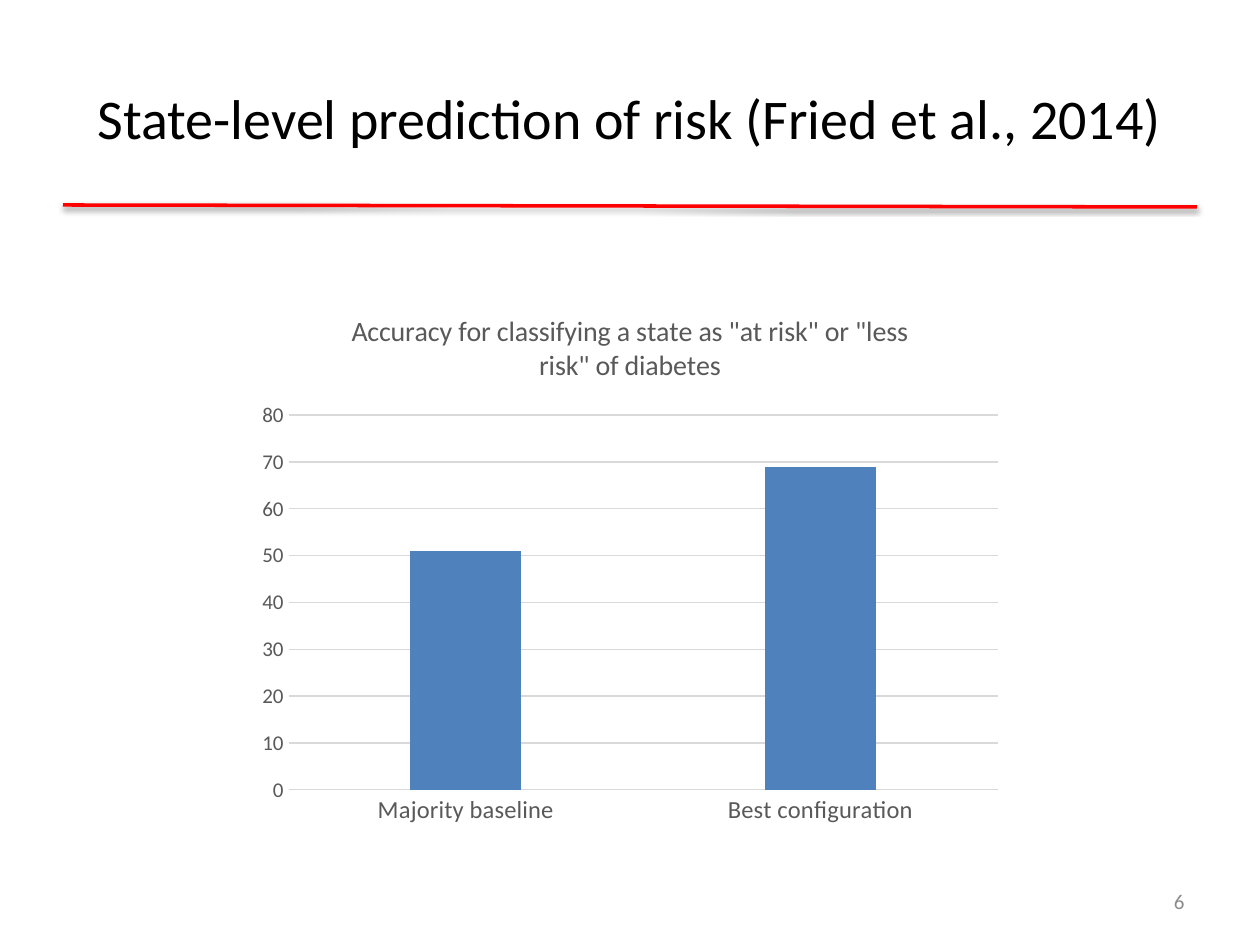
"""Build the slide on state-level prediction of diabetes risk."""
from dataclasses import dataclass

from lxml.etree import SubElement
from pptx import Presentation
from pptx.chart.data import CategoryChartData
from pptx.dml.color import RGBColor
from pptx.enum.chart import XL_CHART_TYPE as ChartType, XL_TICK_MARK as TickMark
from pptx.enum.shapes import MSO_CONNECTOR as Connector
from pptx.enum.text import MSO_ANCHOR as Anchor, PP_ALIGN as Align
from pptx.oxml.ns import qn
from pptx.util import Pt

EMU_PER_PX = 914400 / 126


@dataclass(frozen=True)
class Theme:
    face: str = "Calibri"
    ink: str = "000000"
    label: str = "595959"
    muted: str = "8C8C8C"
    grid: str = "D9D9D9"
    bar: str = "4F81BD"
    rule: str = "FF0000"
    title_size: int = 32
    caption_size: int = 16
    category_size: int = 14
    small_size: int = 12
    chart_size: int = 10


THEME = Theme()


def px(*lengths):
    return [round(length * EMU_PER_PX) for length in lengths]


def apply(target, values):
    for name, value in values.items():
        setattr(target, name, value)


def style_font(font, size, color):
    apply(font, {"name": THEME.face, "size": Pt(size), "bold": False})
    font.color.rgb = RGBColor.from_string(color)


def style_line(line, color, width):
    line.color.rgb = RGBColor.from_string(color)
    line.width = Pt(width)


def write(shape, text, box, size, color, align):
    apply(shape, dict(zip(("left", "top", "width", "height"), px(*box))))
    frame = shape.text_frame
    apply(frame, {"word_wrap": True, "vertical_anchor": Anchor.MIDDLE, "text": text})
    paragraph = frame.paragraphs[0]
    paragraph.alignment = align
    style_font(paragraph.runs[0].font, size, color)


def add_rule(slide, start, end):
    rule = slide.shapes.add_connector(Connector.STRAIGHT, *px(*start, *end))
    style_line(rule.line, THEME.rule, 2)
    effects = SubElement(rule._element.spPr, qn("a:effectLst"))
    shadow = SubElement(effects, qn("a:outerShdw"), blurRad="40000",
                        dist="20000", dir="5400000", rotWithShape="0")
    tint = SubElement(shadow, qn("a:srgbClr"), val=THEME.ink)
    SubElement(tint, qn("a:alpha"), val="38000")


def style_axis(axis, size):
    apply(axis, {"major_tick_mark": TickMark.NONE, "minor_tick_mark": TickMark.NONE})
    style_font(axis.tick_labels.font, size, THEME.label)


def add_accuracy_chart(slide, box, caption, accuracies):
    data = CategoryChartData()
    data.categories = list(accuracies)
    data.add_series("Series 1", list(accuracies.values()))
    chart = slide.shapes.add_chart(ChartType.COLUMN_CLUSTERED, *px(*box), data).chart
    apply(chart, {"has_legend": False, "has_title": True})
    style_font(chart.font, THEME.chart_size, THEME.ink)

    title = chart.chart_title
    title.include_in_layout = False
    title.text_frame.text = caption
    style_font(title.text_frame.paragraphs[0].runs[0].font,
               THEME.caption_size, THEME.label)

    categories, values = chart.category_axis, chart.value_axis
    style_axis(categories, THEME.category_size)
    style_axis(values, THEME.small_size)
    apply(values, {"minimum_scale": 0, "maximum_scale": 80, "major_unit": 10})
    values.format.line.fill.background()
    for line in (categories.format.line, values.major_gridlines.format.line):
        style_line(line, THEME.grid, 0.75)

    plot = chart.plots[0]
    apply(plot, {"gap_width": 219, "overlap": -27, "vary_by_categories": False})
    fill = plot.series[0].format.fill
    fill.solid()
    fill.fore_color.rgb = RGBColor.from_string(THEME.bar)


def main():
    deck = Presentation()
    deck.slide_width, deck.slide_height = px(1260, 945)
    slide = deck.slides.add_slide(deck.slide_layouts[5])
    add_rule(slide, (63, 205), (1197, 207))
    write(slide.shapes.title, "State-level prediction of risk (Fried et al., 2014)",
          (63, 38, 1134, 158), THEME.title_size, THEME.ink, Align.CENTER)
    number_box = (903, 876, 294, 50)
    write(slide.shapes.add_textbox(*px(*number_box)), "6", number_box,
          THEME.small_size, THEME.muted, Align.RIGHT)
    add_accuracy_chart(
        slide, (247, 289, 766, 547),
        'Accuracy for classifying a state as "at risk" or "less risk" of diabetes',
        {"Majority baseline": 51, "Best configuration": 69})
    deck.save("out.pptx")


if __name__ == "__main__":
    main()
